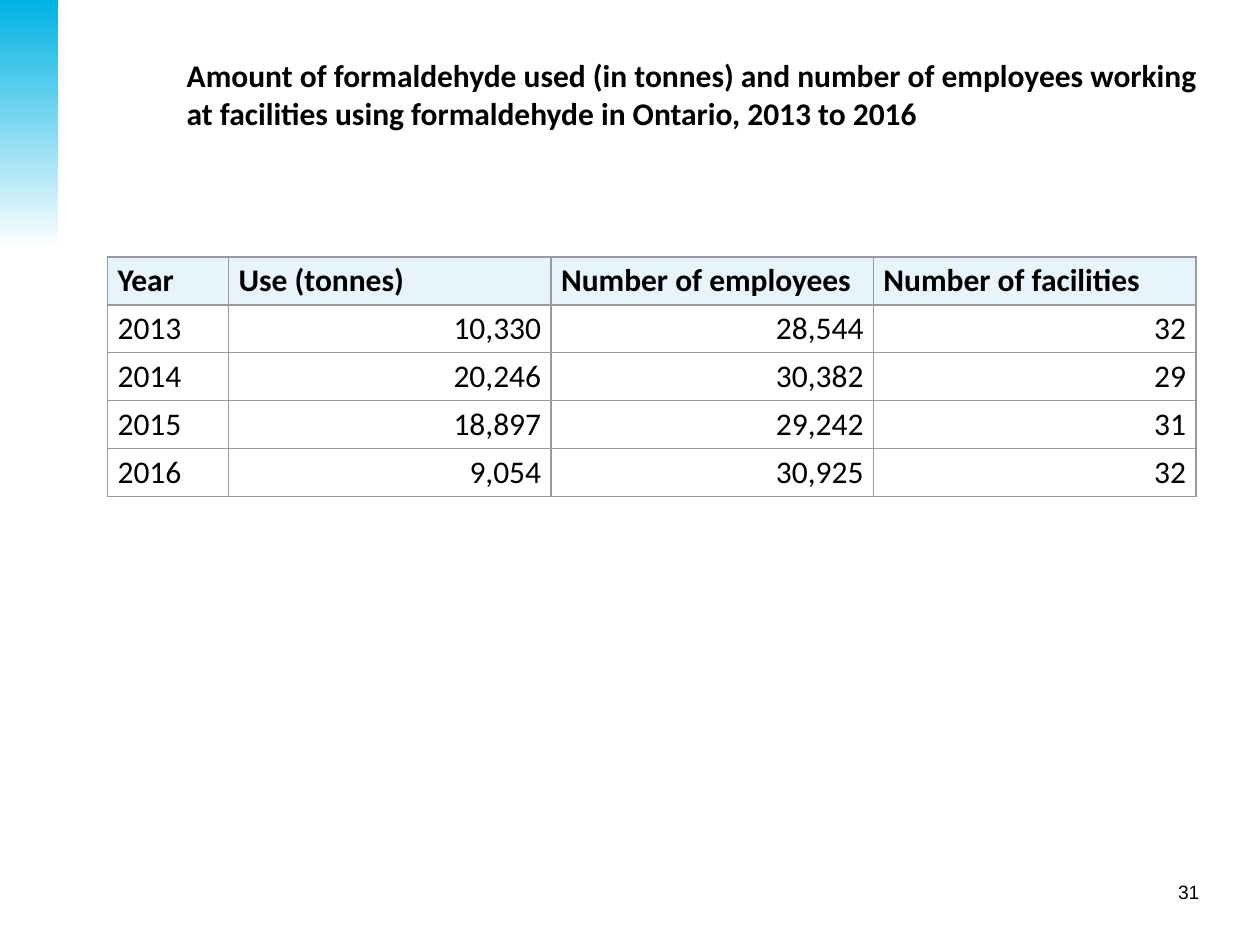
import dataclasses

import lxml.etree
import pptx
import pptx.dml.color
import pptx.enum.shapes
import pptx.enum.text
import pptx.oxml.ns
import pptx.util

Cm, Pt = pptx.util.Cm, pptx.util.Pt
ALIGN = pptx.enum.text.PP_ALIGN
ANCHOR = pptx.enum.text.MSO_ANCHOR
qn = pptx.oxml.ns.qn


@dataclasses.dataclass(frozen=True)
class Theme:
    text: str = "000000"
    accent: str = "00B2E3"
    paper: str = "FFFFFF"
    header: str = "E7F4FB"
    border: str = "99999E"
    body_font: str = "Calibri"
    number_font: str = "Arial"
    body_size: int = 18
    number_size: int = 11


def rgb(value):
    return pptx.dml.color.RGBColor.from_string(value)


def put_text(tf, text, *, font, size, color, bold=False, align=ALIGN.LEFT,
             anchor=ANCHOR.TOP):
    tf.word_wrap = True
    tf.vertical_anchor = anchor
    p = tf.paragraphs[0]
    p.alignment = align
    r = p.add_run()
    r.text = text
    r.font.name, r.font.size, r.font.bold = font, Pt(size), bold
    r.font.color.rgb = rgb(color)


def set_borders(cell, color, width):
    tc_pr = cell._tc.get_or_add_tcPr()
    for i, side in enumerate(("a:lnL", "a:lnR", "a:lnT", "a:lnB")):
        ln = lxml.etree.Element(qn(side), w=str(Pt(width)))
        fill = lxml.etree.SubElement(ln, qn("a:solidFill"))
        lxml.etree.SubElement(fill, qn("a:srgbClr"), val=color)
        tc_pr.insert(i, ln)  # borders come before the cell fill


class SlideBuilder:
    def __init__(self, slide, theme):
        self.s = slide
        self.theme = theme
        self.body = dict(font=theme.body_font, size=theme.body_size,
                         color=theme.text)

    def title(self, text, left, top, width, height):
        sp = self.s.shapes.title
        sp.left, sp.top, sp.width, sp.height = map(Cm, (left, top, width, height))
        put_text(sp.text_frame, text, bold=True, **self.body)
        sp.text_frame.auto_size = pptx.enum.text.MSO_AUTO_SIZE.NONE

    def gradient_band(self, left, top, width, height):
        sp = self.s.shapes.add_shape(pptx.enum.shapes.MSO_SHAPE.RECTANGLE,
                                     *map(Cm, (left, top, width, height)))
        sp.shadow.inherit = False
        sp.line.fill.background()
        sp.fill.gradient()
        sp.fill.gradient_angle = 270
        for stop, color in zip(sp.fill.gradient_stops,
                               (self.theme.accent, self.theme.paper)):
            stop.color.rgb = rgb(color)

    def slide_number(self, text, left, top, width, height):
        sp = self.s.shapes.add_textbox(*map(Cm, (left, top, width, height)))
        put_text(sp.text_frame, text, font=self.theme.number_font,
                 size=self.theme.number_size, color=self.theme.text,
                 align=ALIGN.RIGHT, anchor=ANCHOR.MIDDLE)

    def table(self, rows, left, top, col_widths, row_height):
        """Add a table whose first row is a header and first column holds labels."""
        table = self.s.shapes.add_table(
            len(rows), len(col_widths), Cm(left), Cm(top),
            Cm(sum(col_widths)), Cm(row_height * len(rows))).table
        for col, width in zip(table.columns, col_widths):
            col.width = Cm(width)
        for i, row in enumerate(rows):
            table.rows[i].height = Cm(row_height)
            for j, text in enumerate(row):
                self.cell(table.cell(i, j), text, header=i == 0, label=j == 0)

    def cell(self, cell, text, header, label):
        cell.margin_left = cell.margin_right = Cm(0.2)
        cell.margin_top = cell.margin_bottom = Cm(0.1)
        if header:
            cell.fill.solid()
            cell.fill.fore_color.rgb = rgb(self.theme.header)
        else:
            cell.fill.background()
        set_borders(cell, self.theme.border, 1)
        put_text(cell.text_frame, text, bold=header,
                 align=ALIGN.LEFT if header or label else ALIGN.RIGHT,
                 **self.body)


def main():
    prs = pptx.Presentation()
    prs.slide_width, prs.slide_height = Cm(25.4), Cm(19.05)
    title_only = prs.slide_layouts[5]
    b = SlideBuilder(prs.slides.add_slide(title_only), Theme())

    b.slide_number("31", 21.46, 17.6, 2.97, 0.74)
    b.gradient_band(0, 0, 1.17, 5.03)
    b.table([
        ("Year", "Use (tonnes)", "Number of employees", "Number of facilities"),
        ("2013", "10,330", "28,544", "32"),
        ("2014", "20,246", "30,382", "29"),
        ("2015", "18,897", "29,242", "31"),
        ("2016", "9,054", "30,925", "32"),
    ], left=2.17, top=5.18, col_widths=[2.44] + [6.5] * 3, row_height=0.965)
    b.title("Amount of formaldehyde used (in tonnes) and number of employees "
            "working at facilities using formaldehyde in Ontario, 2013 to 2016",
            3.51, 1, 21.49, 2.31)

    prs.save("out.pptx")


if __name__ == "__main__":
    main()
